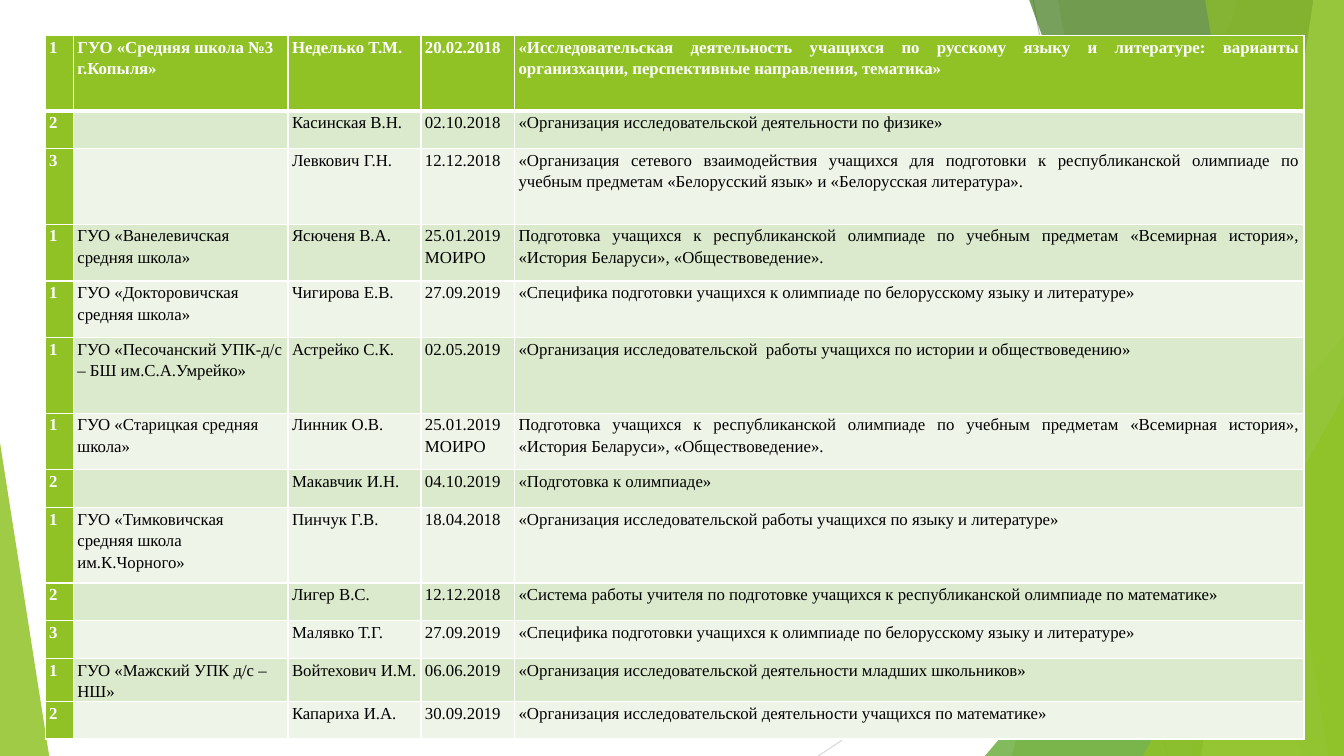
from dataclasses import dataclass
from typing import Any, NamedTuple

from lxml.etree import SubElement
from pptx import Presentation
from pptx.dml.color import RGBColor
from pptx.enum.shapes import MSO_CONNECTOR as Connector, MSO_SHAPE as Preset
from pptx.enum.text import PP_ALIGN as Align
from pptx.oxml.ns import qn
from pptx.util import Cm, Pt


@dataclass(frozen=True)
class Theme:
    """Colours and type of the slide."""
    lime: str = "90C226"
    green: str = "54A021"
    forest: str = "3F7819"
    pale_lime: str = "C0E474"
    band_dark: str = "DBE9CD"
    band_light: str = "EEF4E8"
    white: str = "FFFFFF"
    black: str = "000000"
    grey: str = "BFBFBF"
    light_grey: str = "D9D9D9"
    font: str = "Times New Roman"
    text_size: float = 12
    line_spacing: float = 1.15
    hairline: float = 0.75
    border: float = 1
    header_border: float = 3


class Ray(NamedTuple):
    """A thin background line."""
    start: tuple[float, float]
    end: tuple[float, float]
    colour: str


class Facet(NamedTuple):
    """A translucent area from a slanted left edge to the right slide edge."""
    top_x: float
    bottom_x: float
    colour: str
    opacity: int


class Wedge(NamedTuple):
    """A translucent triangle standing on the bottom slide edge."""
    left: float
    top: float
    width: float
    apex: float
    colour: str
    opacity: int


class Report(NamedTuple):
    """One table row."""
    height: float
    number: str
    school: str
    teacher: str
    date: str
    topic: str


THEME = Theme()
WIDTH, HEIGHT = 33.87, 19.05
FACET_TOP = -0.02
TABLE_LEFT, TABLE_TOP = 1.14, 0.9
COLUMNS = (0.71, 5.41, 3.35, 2.36, 19.89)
LOW, MIDDLE, TALL = 0.95, 1.43, 1.9
CELL_INSET = 0.1

RAYS = (
    Ray((26.04, 0), (29.41, HEIGHT), THEME.grey),
    Ray((WIDTH, 10.24), (20.62, HEIGHT), THEME.light_grey),
)
BACKDROP = (
    Facet(31.18, 25.49, THEME.lime, 30),
    Facet(26.66, 30.04, THEME.lime, 20),
    Wedge(24.82, 8.46, 9.05, 1, THEME.green, 72),
    Facet(25.93, 32.8, THEME.forest, 70),
    Facet(33.1, 30.27, THEME.pale_lime, 70),
    Facet(30.37, 33.48, THEME.lime, 65),
    Wedge(28.8, 9.98, 5.07, 1, THEME.lime, 80),
    Wedge(0, 11.15, 1.24, 0, THEME.lime, 85),
)
HISTORY = ("Подготовка учащихся к республиканской олимпиаде по учебным предметам "
           "«Всемирная история», «История Беларуси», «Обществоведение».")
BELARUSIAN = "«Специфика подготовки учащихся к олимпиаде по белорусскому языку и литературе»"
REPORTS = (
    Report(TALL, "1", "ГУО «Средняя школа №3 г.Копыля»", "Неделько Т.М.", "20.02.2018",
           "«Исследовательская деятельность учащихся по русскому языку и литературе: "
           "варианты организхации, перспективные направления, тематика»"),
    Report(LOW, "2", "", "Касинская В.Н.", "02.10.2018",
           "«Организация исследовательской деятельности по физике»"),
    Report(TALL, "3", "", "Левкович Г.Н.", "12.12.2018",
           "«Организация сетевого взаимодействия учащихся для подготовки к республиканской "
           "олимпиаде по учебным предметам «Белорусский язык» и «Белорусская литература»."),
    Report(MIDDLE, "1", "ГУО «Ванелевичская средняя школа»", "Ясюченя В.А.",
           "25.01.2019\nМОИРО", HISTORY),
    Report(MIDDLE, "1", "ГУО «Докторовичская средняя школа»", "Чигирова Е.В.",
           "27.09.2019", BELARUSIAN),
    Report(TALL, "1", "ГУО «Песочанский УПК-д/с – БШ им.С.А.Умрейко»", "Астрейко С.К.",
           "02.05.2019",
           "«Организация исследовательской  работы учащихся по истории и обществоведению»"),
    Report(MIDDLE, "1", "ГУО «Старицкая средняя школа»", "Линник О.В.",
           "25.01.2019\nМОИРО", HISTORY),
    Report(LOW, "2", "", "Макавчик И.Н.", "04.10.2019", "«Подготовка к олимпиаде»"),
    Report(TALL, "1", "ГУО «Тимковичская средняя школа им.К.Чорного»", "Пинчук Г.В.",
           "18.04.2018", "«Организация исследовательской работы учащихся по языку и литературе»"),
    Report(LOW, "2", "", "Лигер В.С.", "12.12.2018",
           "«Система работы учителя по подготовке учащихся к республиканской олимпиаде "
           "по математике»"),
    Report(LOW, "3", "", "Малявко Т.Г.", "27.09.2019", BELARUSIAN),
    Report(LOW, "1", "ГУО «Мажский УПК д/с – НШ»", "Войтехович И.М.", "06.06.2019",
           "«Организация исследовательской деятельности младших школьников»"),
    Report(LOW, "2", "", "Капариха И.А.", "30.09.2019",
           "«Организация исследовательской деятельности учащихся по математике»"),
)


def draw_ray(slide: Any, ray: Ray) -> None:
    """Draw one background line."""
    connector = slide.shapes.add_connector(
        Connector.STRAIGHT, *(Cm(value) for value in ray.start + ray.end))
    connector.line.color.rgb = RGBColor.from_string(ray.colour)
    connector.line.width = Pt(THEME.hairline)
    SubElement(connector._element.spPr, qn("a:effectLst"))


def paint(shape: Any, colour: str, opacity: int) -> None:
    """Give a shape a translucent fill without line or shadow."""
    shape.shadow.inherit = False
    shape.line.fill.background()
    shape.fill.solid()
    shape.fill.fore_color.rgb = RGBColor.from_string(colour)
    colour_element = shape._element.spPr.find(".//" + qn("a:srgbClr"))
    SubElement(colour_element, qn("a:alpha"), val=str(opacity * 1000))


def draw_facet(slide: Any, facet: Facet) -> None:
    """Draw one four-sided area."""
    builder = slide.shapes.build_freeform(Cm(facet.top_x), Cm(FACET_TOP))
    corners = ((WIDTH, FACET_TOP), (WIDTH, HEIGHT), (facet.bottom_x, HEIGHT))
    builder.add_line_segments([(Cm(x), Cm(y)) for x, y in corners])
    paint(builder.convert_to_shape(), facet.colour, facet.opacity)


def draw_wedge(slide: Any, wedge: Wedge) -> None:
    """Draw one triangle."""
    shape = slide.shapes.add_shape(Preset.ISOSCELES_TRIANGLE, Cm(wedge.left), Cm(wedge.top),
                                   Cm(wedge.width), Cm(HEIGHT - wedge.top))
    shape.adjustments[0] = wedge.apex
    paint(shape, wedge.colour, wedge.opacity)


def set_borders(cell: Any, widths: dict[str, float]) -> None:
    """Give a cell white borders of the given widths."""
    properties = cell._tc.get_or_add_tcPr()
    for side, width in widths.items():
        line = SubElement(properties, qn(f"a:ln{side}"), w=str(Pt(width)))
        SubElement(SubElement(line, qn("a:solidFill")), qn("a:srgbClr"), val=THEME.white)


def fill_cell(cell: Any, text: str, row: int, column: int) -> None:
    """Write and format one cell."""
    accented = row == 0 or column == 0
    band = THEME.band_dark if row % 2 else THEME.band_light
    top, bottom = (THEME.header_border if row == edge else THEME.border for edge in (1, 0))
    set_borders(cell, {"L": THEME.border, "R": THEME.border, "T": top, "B": bottom})
    cell.fill.solid()
    cell.fill.fore_color.rgb = RGBColor.from_string(THEME.lime if accented else band)
    cell.margin_left = cell.margin_right = Cm(CELL_INSET)
    cell.margin_top = cell.margin_bottom = 0
    cell.text = text
    for paragraph in cell.text_frame.paragraphs:
        paragraph.line_spacing = THEME.line_spacing
        paragraph.alignment = Align.JUSTIFY if column == len(COLUMNS) - 1 else Align.LEFT
        font = paragraph.font
        font.name, font.size, font.bold = THEME.font, Pt(THEME.text_size), accented
        font.color.rgb = RGBColor.from_string(THEME.white if accented else THEME.black)


def draw_table(slide: Any) -> None:
    """Draw the table of reports."""
    table = slide.shapes.add_table(
        len(REPORTS), len(COLUMNS), Cm(TABLE_LEFT), Cm(TABLE_TOP), Cm(sum(COLUMNS)),
        Cm(sum(report.height for report in REPORTS))).table
    table.first_col = True
    for column, width in zip(table.columns, COLUMNS):
        column.width = Cm(width)
    for row, report in enumerate(REPORTS):
        table.rows[row].height = Cm(report.height)
        for column, text in enumerate(report[1:]):
            fill_cell(table.cell(row, column), text, row, column)


def main() -> None:
    """Build and save the slide."""
    presentation = Presentation()
    presentation.slide_width, presentation.slide_height = Cm(WIDTH), Cm(HEIGHT)
    slide = presentation.slides.add_slide(presentation.slide_layouts[6])
    for ray in RAYS:
        draw_ray(slide, ray)
    for piece in BACKDROP:
        draw_facet(slide, piece) if isinstance(piece, Facet) else draw_wedge(slide, piece)
    draw_table(slide)
    presentation.save("out.pptx")


if __name__ == "__main__":
    main()
